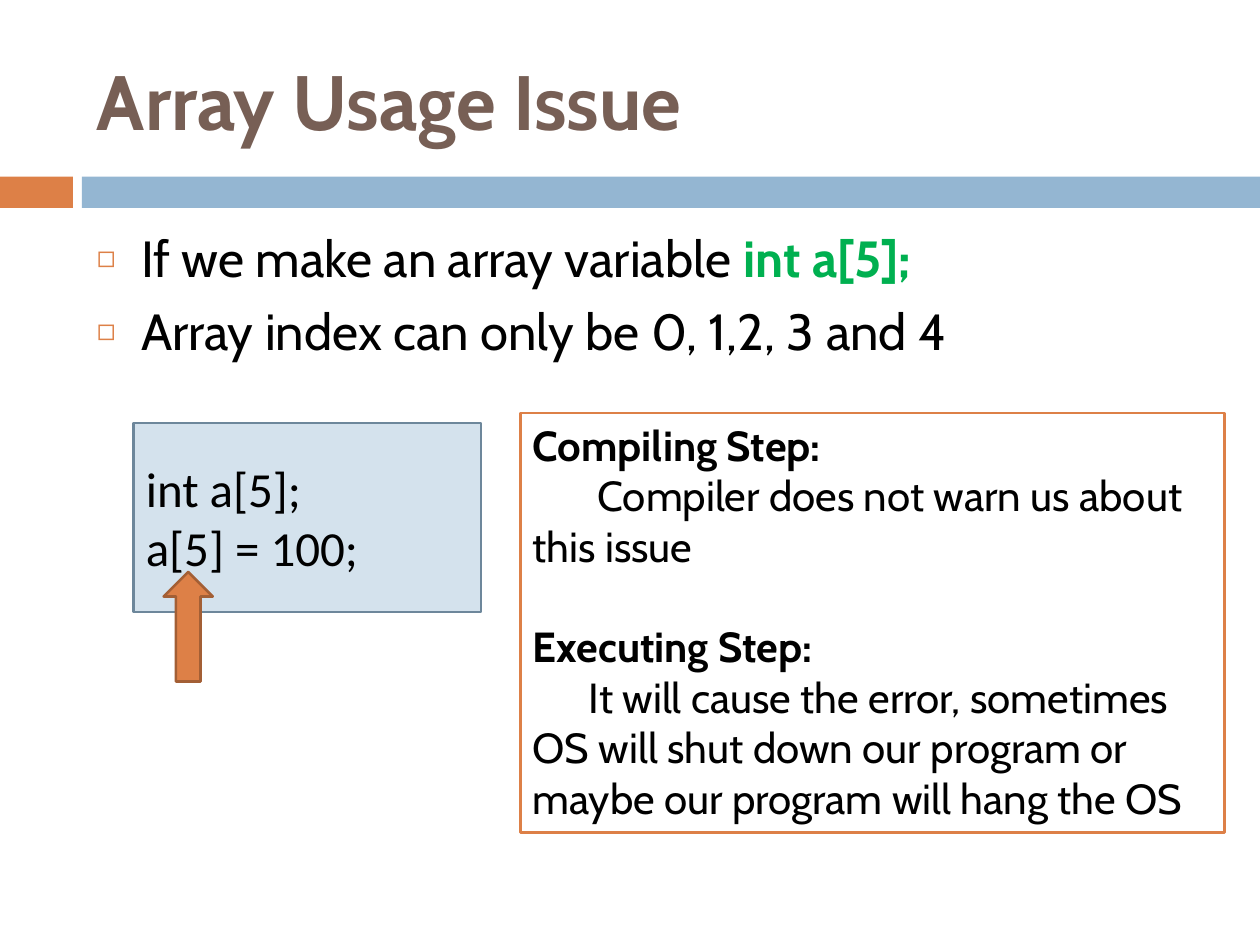
from lxml.etree import SubElement
from pptx import Presentation
from pptx.dml.color import RGBColor
from pptx.enum.shapes import MSO_SHAPE
from pptx.enum.text import MSO_ANCHOR, MSO_AUTO_SIZE, PP_ALIGN
from pptx.oxml.ns import qn
from pptx.util import Cm, Pt

ORANGE, BLUE, BLACK, GREEN = "DD8047", "94B6D2", "000000", "00B050"

TITLE = "Array Usage Issue"
# Each paragraph is a list of (text, colour, bold) runs.
BULLETS = [
    [("If we make an array variable ", BLACK, False), ("int a[5];", GREEN, True)],
    [("Array index can only be 0, 1,2, 3 and 4", BLACK, False)],
]
CODE = ["int a[5];", "a[5] = 100;"]
# Heading, explanation, first-line indent in cm
STEPS = [
    ("Compiling Step:", "Compiler does not warn us about this issue", 1.31),
    ("Executing Step:", "It will cause the error, sometimes OS will shut down "
     "our program or maybe our program will hang the OS", 1.13),
]
# Left, top, width, height in cm
BARS = [((0, 3.56, 1.47, 0.63), ORANGE), ((1.65, 3.56, 23.75, 0.63), BLUE)]
TITLE_BOX = (1.7, 0.64, 22.66, 2.74)
BODY_BOX = (1.7, 4.45, 22.66, 12.5)
CODE_BOX = (2.69, 8.53, 7.01, 3.81)
ARROW_BOX = (3.3, 11.53, 0.99, 2.21)
STEPS_BOX = (10.49, 8.33, 14.2, 8.46)


def rgb(value):
    return RGBColor.from_string(value)


def place(sp, box):
    sp.left, sp.top, sp.width, sp.height = map(Cm, box)


def add_shape(s, kind, box, fill, line=None):
    sp = s.shapes.add_shape(kind, *map(Cm, box))
    sp.shadow.inherit = False
    sp.fill.solid()
    sp.fill.fore_color.rgb = rgb(fill)
    if line:
        sp.line.color.rgb = rgb(line)
        sp.line.width = Pt(1.5)
    else:
        sp.line.fill.background()
    return sp


def add_run(p, text, size, color=BLACK, bold=False, font="Cabin"):
    r = p.add_run()
    r.text = text
    r.font.name, r.font.size, r.font.bold = font, Pt(size), bold
    r.font.color.rgb = rgb(color)


def paragraphs(tf, count):
    """Return the first paragraph followed by count - 1 new ones."""
    return [tf.paragraphs[0]] + [tf.add_paragraph() for _ in range(count - 1)]


def set_bullet(p):
    pPr = p._p.get_or_add_pPr()
    pPr.set("marL", str(Cm(0.89)))
    pPr.set("indent", str(-Cm(0.89)))
    SubElement(SubElement(pPr, qn("a:buClr")), qn("a:srgbClr"), val=ORANGE)
    SubElement(pPr, qn("a:buSzPct"), val="60000")
    SubElement(pPr, qn("a:buChar"), char="◻")


def add_title(s):
    sp = s.shapes.title
    place(sp, TITLE_BOX)
    tf = sp.text_frame
    tf.auto_size = MSO_AUTO_SIZE.NONE
    tf.vertical_anchor = MSO_ANCHOR.MIDDLE
    p = tf.paragraphs[0]
    p.alignment = PP_ALIGN.LEFT
    add_run(p, TITLE, 44, "775F55", True)


def add_bullets(s):
    sp = s.placeholders[1]
    place(sp, BODY_BOX)
    tf = sp.text_frame
    tf.auto_size = MSO_AUTO_SIZE.NONE
    for p, runs in zip(paragraphs(tf, len(BULLETS)), BULLETS):
        p.space_before = Pt(7)
        set_bullet(p)
        for text, color, bold in runs:
            add_run(p, text, 29, color, bold)


def add_code(s):
    tf = add_shape(s, MSO_SHAPE.RECTANGLE, CODE_BOX, "D4E2ED", "6D879B").text_frame
    tf.vertical_anchor = MSO_ANCHOR.MIDDLE
    for p, text in zip(paragraphs(tf, len(CODE)), CODE):
        p.alignment = PP_ALIGN.LEFT
        add_run(p, text, 28, font="Calibri")


def add_steps(s):
    tf = add_shape(s, MSO_SHAPE.RECTANGLE, STEPS_BOX, "FFFFFF", ORANGE).text_frame
    tf.word_wrap = True
    tf.vertical_anchor = MSO_ANCHOR.TOP
    ps = paragraphs(tf, 2 * len(STEPS))
    for i, (heading, text, indent) in enumerate(STEPS):
        head, detail = ps[2 * i:2 * i + 2]
        head.alignment = detail.alignment = PP_ALIGN.LEFT
        if i:
            head.space_before = Pt(28.8)
        add_run(head, heading, 24, bold=True)
        detail._p.get_or_add_pPr().set("indent", str(Cm(indent)))
        add_run(detail, text, 24)


def main():
    prs = Presentation()
    prs.slide_width, prs.slide_height = Cm(25.4), Cm(19.05)
    s = prs.slides.add_slide(prs.slide_layouts[1])
    for box, fill in BARS:
        add_shape(s, MSO_SHAPE.RECTANGLE, box, fill)
    add_title(s)
    add_bullets(s)
    add_code(s)
    add_shape(s, MSO_SHAPE.UP_ARROW, ARROW_BOX, ORANGE, "A35F35")
    add_steps(s)
    prs.save("out.pptx")


if __name__ == "__main__":
    main()
